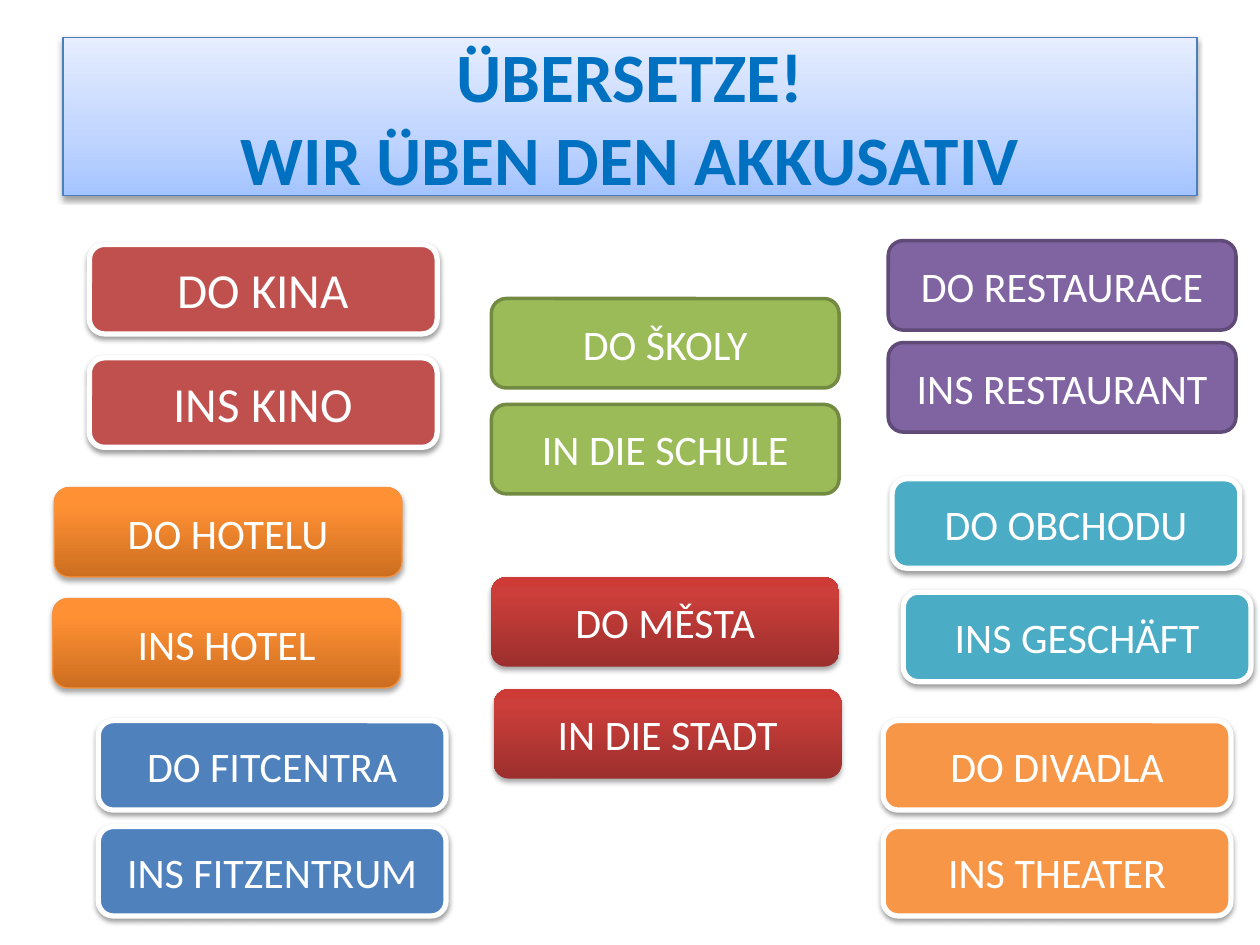
from dataclasses import dataclass
from typing import Optional

from lxml.etree import SubElement
from pptx import Presentation
from pptx.dml.color import RGBColor
from pptx.enum.shapes import MSO_SHAPE as Shape
from pptx.enum.text import MSO_ANCHOR as Anchor, PP_ALIGN as Align
from pptx.oxml.ns import qn
from pptx.util import Pt

WHITE = RGBColor(0xFF, 0xFF, 0xFF)
BLACK = RGBColor(0x00, 0x00, 0x00)
TITLE_BLUE = RGBColor(0x00, 0x70, 0xC0)
TITLE_EDGE = RGBColor(0x4B, 0x7E, 0xBC)
RED = RGBColor(0xC0, 0x50, 0x4D)
GREEN = RGBColor(0x9B, 0xBB, 0x59)
GREEN_EDGE = RGBColor(0x73, 0x8A, 0x42)
PURPLE = RGBColor(0x80, 0x64, 0xA2)
PURPLE_EDGE = RGBColor(0x5F, 0x4A, 0x78)
BLUE = RGBColor(0x4F, 0x81, 0xBD)
TEAL = RGBColor(0x4B, 0xAC, 0xC6)
ORANGE = RGBColor(0xF7, 0x96, 0x46)
ORANGE_EDGE = RGBColor(0xF6, 0x92, 0x40)

# Gradient stops run from bottom to top: (percent, colour)
TITLE_GRADIENT = [(0, RGBColor(0xA4, 0xC4, 0xFF)),
                  (35, RGBColor(0xBF, 0xD4, 0xFF)),
                  (100, RGBColor(0xE6, 0xEE, 0xFF))]
ORANGE_GRADIENT = [(0, RGBColor(0xCC, 0x6E, 0x20)),
                   (80, RGBColor(0xFF, 0x90, 0x34)),
                   (100, RGBColor(0xFF, 0x91, 0x36))]
RED_GRADIENT = [(0, RGBColor(0x9C, 0x2F, 0x2D)),
                (80, RGBColor(0xCB, 0x3E, 0x3A)),
                (100, RGBColor(0xCE, 0x3B, 0x37))]

FONT = "Calibri"
CARD_WIDTH, CARD_HEIGHT = 198.7, 51.1


@dataclass
class Shadow:
    distance: float
    opacity: int


@dataclass
class Style:
    fill: object  # one colour, or a list of gradient stops
    edge: Optional[RGBColor] = WHITE
    edge_width: float = 3
    shadow: Optional[Shadow] = None


SOFT = Shadow(1.6, 38)
DEEP = Shadow(1.8, 35)

TITLE_STYLE = Style(TITLE_GRADIENT, TITLE_EDGE, 0.75, SOFT)
RED_STYLE = Style(RED, shadow=SOFT)
BLUE_STYLE = Style(BLUE, shadow=SOFT)
TEAL_STYLE = Style(TEAL, shadow=SOFT)
ORANGE_STYLE = Style(ORANGE, shadow=SOFT)
GREEN_STYLE = Style(GREEN, GREEN_EDGE, 2)
PURPLE_STYLE = Style(PURPLE, PURPLE_EDGE, 2)
GLOSSY_ORANGE = Style(ORANGE_GRADIENT, ORANGE_EDGE, 0.75, DEEP)
GLOSSY_RED = Style(RED_GRADIENT, None, 0, DEEP)

# Czech text and place, German text and place, style, text size
PAIRS = [
    ("DO KINA", (51.1, 139.7), "INS KINO", (51.1, 204.5), RED_STYLE, 28),
    ("DO HOTELU", (31, 278.6), "INS HOTEL", (30.2, 342), GLOSSY_ORANGE, 24),
    ("DO FITCENTRA", (56.2, 411.8), "INS FITZENTRUM", (56.2, 472.3), BLUE_STYLE, 24),
    ("DO ŠKOLY", (280.8, 170.6), "IN DIE SCHULE", (280.8, 231.1), GREEN_STYLE, 24),
    ("DO MĚSTA", (280.8, 329.8), "IN DIE STADT", (282.2, 393.8), GLOSSY_RED, 24),
    ("DO RESTAURACE", (507.6, 137.5), "INS RESTAURANT", (507.6, 195.8), PURPLE_STYLE, 24),
    ("DO OBCHODU", (509.8, 273.6), "INS GESCHÄFT", (516.2, 338.4), TEAL_STYLE, 24),
    ("DO DIVADLA", (504.7, 411.8), "INS THEATER", (504.7, 472.3), ORANGE_STYLE, 24),
]


def add_color(parent, color):
    return SubElement(parent, qn("a:srgbClr"), val=str(color))


def paint_gradient(shape, stops):
    shape.fill.gradient()
    shape.fill.gradient_angle = 90
    stop_list = shape._element.spPr.find(qn("a:gradFill")).find(qn("a:gsLst"))
    for old_stop in list(stop_list):
        stop_list.remove(old_stop)
    for percent, color in stops:
        stop = SubElement(stop_list, qn("a:gs"), pos=str(percent * 1000))
        add_color(stop, color)


def cast_shadow(shape, shadow):
    effects = shape._element.spPr.find(qn("a:effectLst"))
    outer = SubElement(effects, qn("a:outerShdw"), blurRad=str(Pt(3.1)),
                       dist=str(Pt(shadow.distance)), dir="5400000",
                       rotWithShape="0")
    SubElement(add_color(outer, BLACK), qn("a:alpha"),
               val=str(shadow.opacity * 1000))


def apply_style(shape, style):
    shape.shadow.inherit = False
    if isinstance(style.fill, list):
        paint_gradient(shape, style.fill)
    else:
        shape.fill.solid()
        shape.fill.fore_color.rgb = style.fill
    if style.edge is None:
        shape.line.fill.background()
    else:
        shape.line.color.rgb = style.edge
        shape.line.width = Pt(style.edge_width)
    if style.shadow:
        cast_shadow(shape, style.shadow)


def write_text(shape, text, size=24, color=WHITE, bold=False):
    frame = shape.text_frame
    frame.word_wrap = True
    frame.vertical_anchor = Anchor.MIDDLE
    para = frame.paragraphs[0]
    para.text = text
    para.alignment = Align.CENTER
    for span in para.runs:
        span.font.name = FONT
        span.font.size = Pt(size)
        span.font.bold = bold
        span.font.color.rgb = color


def add_panel(page, kind, box, style, text, **text_format):
    shape = page.shapes.add_shape(kind, *(Pt(length) for length in box))
    apply_style(shape, style)
    write_text(shape, text, **text_format)


def add_title(page, box):
    add_panel(page, Shape.RECTANGLE, box, TITLE_STYLE,
              "ÜBERSETZE!\vWIR ÜBEN DEN AKKUSATIV",
              size=39.6, color=TITLE_BLUE, bold=True)


def add_pair(page, czech, czech_place, german, german_place, style, size):
    """Place a Czech phrase card and its German translation card."""
    for text, place in ((czech, czech_place), (german, german_place)):
        box = (*place, CARD_WIDTH, CARD_HEIGHT)
        add_panel(page, Shape.ROUNDED_RECTANGLE, box, style, text, size=size)


def main():
    deck = Presentation()
    deck.slide_width, deck.slide_height = Pt(720), Pt(540)
    page = deck.slides.add_slide(deck.slide_layouts[6])
    add_title(page, (36, 21.6, 648, 90))
    for pair in PAIRS:
        add_pair(page, *pair)
    deck.save("out.pptx")


if __name__ == "__main__":
    main()
